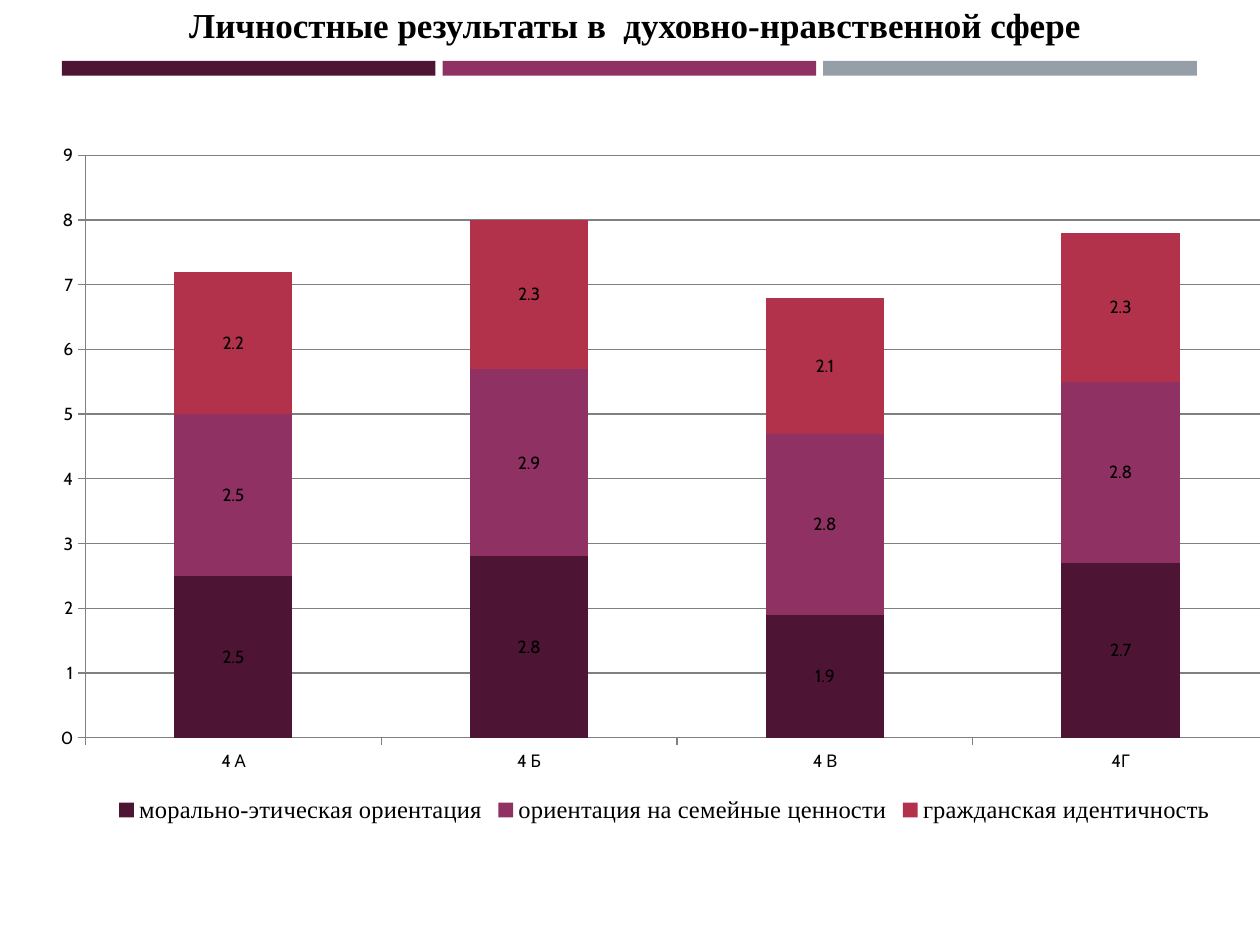
from lxml.etree import SubElement
from pptx import Presentation
from pptx.chart.data import CategoryChartData
from pptx.dml.color import RGBColor
from pptx.enum.chart import XL_CHART_TYPE, XL_LABEL_POSITION, XL_LEGEND_POSITION, XL_TICK_MARK
from pptx.enum.shapes import MSO_SHAPE
from pptx.enum.text import MSO_ANCHOR, PP_ALIGN
from pptx.oxml.ns import qn
from pptx.util import Pt

TITLE = "Личностные результаты в  духовно-нравственной сфере"
BAR_COLORS = ["4D1434", "903163", "969FA7"]
CLASSES = ["4 А", "4 Б", "4 В", "4Г"]
RESULTS = [
    ("морально-этическая ориентация", (2.5, 2.8, 1.9, 2.7), "4D1434"),
    ("ориентация на семейные ценности", (2.5, 2.9, 2.8, 2.8), "903163"),
    ("гражданская идентичность", (2.2, 2.3, 2.1, 2.3), "B2324B"),
]
PLOT_LAYOUT = {"x": 0.04, "y": 0.04, "w": 0.94, "h": 0.83}
BAR_LEFT, BAR_TOP, BAR_WIDTH, BAR_HEIGHT, BAR_GAP = 35.4, 34.8, 213.5, 8.4, 4


def color(value):
    return RGBColor.from_string(value)


def set_font(font, name, size, bold=False):
    font.name = name
    font.size = Pt(size)
    font.bold = bold
    font.color.rgb = color("000000")


def add_title(slide):
    title = slide.shapes.title
    title.left, title.top, title.width, title.height = Pt(65.5), Pt(0), Pt(600), Pt(28)
    frame = title.text_frame
    frame.word_wrap = True
    frame.vertical_anchor = MSO_ANCHOR.MIDDLE
    frame.margin_top = frame.margin_bottom = Pt(0)
    frame.text = TITLE
    paragraph = frame.paragraphs[0]
    paragraph.alignment = PP_ALIGN.LEFT
    properties = paragraph._p.get_or_add_pPr()
    properties.set("marL", "0")
    properties.set("indent", str(Pt(35.4)))
    set_font(paragraph.font, "Times New Roman", 20, True)


def add_bars(slide):
    for index, fill in enumerate(BAR_COLORS):
        left = BAR_LEFT + index * (BAR_WIDTH + BAR_GAP)
        bar = slide.shapes.add_shape(
            MSO_SHAPE.RECTANGLE, Pt(left), Pt(BAR_TOP), Pt(BAR_WIDTH), Pt(BAR_HEIGHT))
        bar.shadow.inherit = False
        bar.fill.solid()
        bar.fill.fore_color.rgb = color(fill)
        bar.line.fill.background()


def set_plot_layout(chart):
    area = chart._chartSpace.chart.plotArea
    for layout in area.findall(qn("c:layout")):
        area.remove(layout)
    layout = SubElement(area, qn("c:layout"))
    area.insert(0, layout)
    manual = SubElement(layout, qn("c:manualLayout"))
    SubElement(manual, qn("c:layoutTarget")).set("val", "inner")
    for side in "xy":
        SubElement(manual, qn(f"c:{side}Mode")).set("val", "edge")
    for side, share in PLOT_LAYOUT.items():
        SubElement(manual, qn(f"c:{side}")).set("val", str(share))


def add_results_chart(slide):
    data = CategoryChartData(number_format="General")
    data.categories = CLASSES
    for name, values, _ in RESULTS:
        data.add_series(name, values)
    chart = slide.shapes.add_chart(
        XL_CHART_TYPE.COLUMN_STACKED, Pt(20), Pt(72.7), Pt(719.3), Pt(401), data).chart
    chart.has_title = False
    set_font(chart.font, "Cabin", 10)
    set_plot_layout(chart)

    plot = chart.plots[0]
    plot.gap_width, plot.overlap = 150, 100
    plot.vary_by_categories = False
    for series, (_, _, fill) in zip(plot.series, RESULTS):
        series.format.fill.solid()
        series.format.fill.fore_color.rgb = color(fill)
        labels = series.data_labels
        labels.show_value = True
        labels.position = XL_LABEL_POSITION.CENTER
        set_font(labels.font, "Cabin", 10)

    value_axis = chart.value_axis
    value_axis.minimum_scale, value_axis.maximum_scale, value_axis.major_unit = 0, 9, 1
    value_axis.has_major_gridlines = True
    for axis in (chart.category_axis, value_axis):
        axis.major_tick_mark = XL_TICK_MARK.OUTSIDE
        set_font(axis.tick_labels.font, "Cabin", 10)
    for part in (chart.category_axis, value_axis, value_axis.major_gridlines):
        part.format.line.color.rgb = color("808080")
        part.format.line.width = Pt(0.75)

    chart.has_legend = True
    chart.legend.position = XL_LEGEND_POSITION.BOTTOM
    chart.legend.include_in_layout = False
    set_font(chart.legend.font, "Times New Roman", 14)


def main():
    presentation = Presentation()
    presentation.slide_width, presentation.slide_height = Pt(720), Pt(540)
    slide = presentation.slides.add_slide(presentation.slide_layouts[5])
    add_bars(slide)
    add_title(slide)
    add_results_chart(slide)
    presentation.save("out.pptx")


if __name__ == "__main__":
    main()
